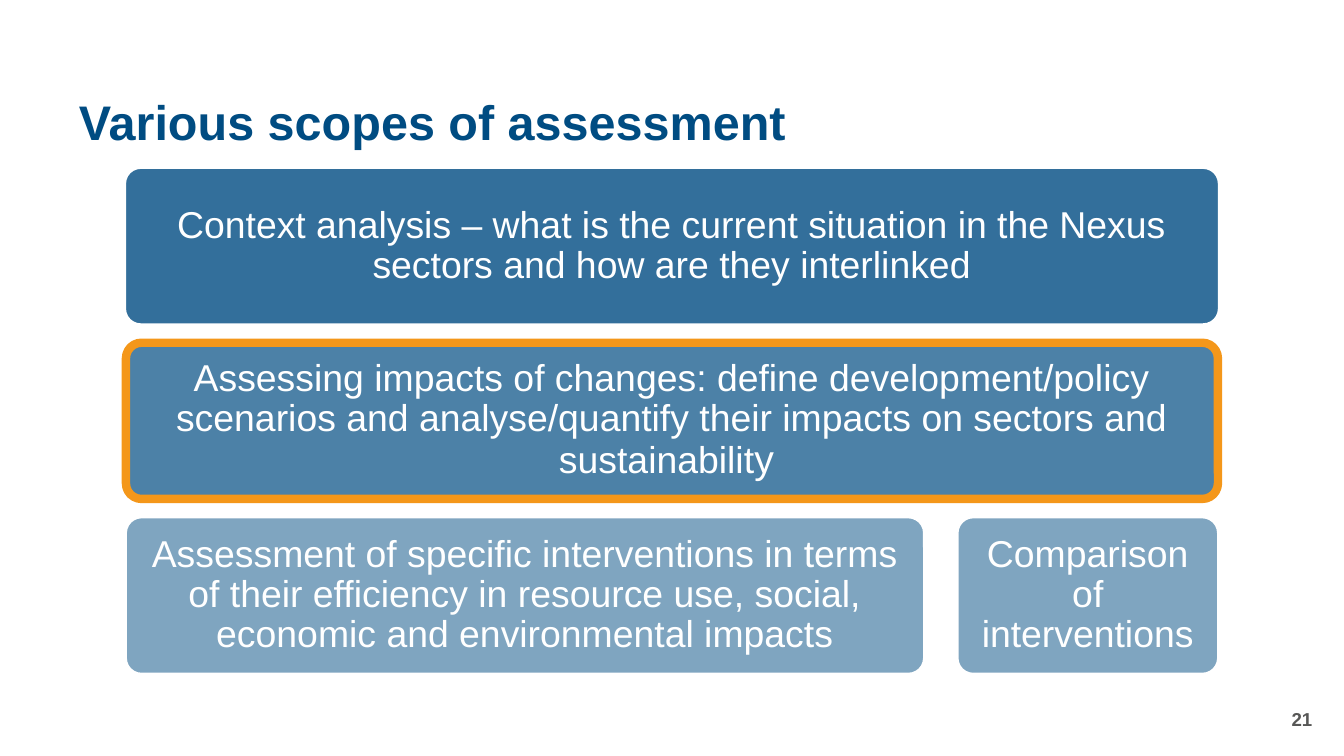
from lxml.etree import SubElement
from pptx import Presentation
from pptx.dml.color import RGBColor
from pptx.enum.shapes import MSO_SHAPE
from pptx.enum.text import MSO_ANCHOR, PP_ALIGN
from pptx.oxml.ns import qn
from pptx.util import Pt

PX = 5715
BLUE = RGBColor(0x00, 0x4C, 0x82)
ORANGE = RGBColor(0xF4, 0x97, 0x1A)
WHITE = RGBColor(0xFF, 0xFF, 0xFF)
GREY = RGBColor(0x57, 0x57, 0x56)

ROW_HEIGHT = 186
ROW_PITCH = 208
SCOPE_ROWS = [
    (80, WHITE, 1, [
        (0, 1302, [("Context analysis – what is the current situation in the Nexus "
                    "sectors and how are they interlinked", 20)]),
    ]),
    (70, ORANGE, 4.5, [
        (1, 1300, [("Assessing impacts of changes: define development/policy scenarios "
                    "and analyse/quantify their impacts on sectors and sustainabilit", 20),
                   ("y ", 21)]),
    ]),
    (50, WHITE, 1, [
        (1, 950, [("Assessment of specific interventions in terms of their efficiency "
                   "in resource use, social, economic and environmental impacts", 20)]),
        (991, 310, [("Comparison of interventions", 20)]),
    ]),
]


def px(*lengths):
    return [length * PX for length in lengths]


def write_line(frame, runs, color, bold, alignment, line_spacing):
    frame.word_wrap = True
    frame.vertical_anchor = MSO_ANCHOR.MIDDLE
    para = frame.paragraphs[0]
    para.alignment = alignment
    para.line_spacing = line_spacing
    para.font.name = "Arial"
    para.font.bold = bold
    para.font.color.rgb = color
    for text, size in runs:
        span = para.add_run()
        span.text = text
        span.font.size = Pt(size)


def add_title(page, left, top, width, height):
    title = page.shapes.title
    title.left, title.top, title.width, title.height = px(left, top, width, height)
    write_line(title.text_frame, [("Various scopes of assessment", 26)],
               BLUE, True, PP_ALIGN.LEFT, 0.9)


def add_page_number(page, left, top, width, height):
    box = page.shapes.add_textbox(*px(left, top, width, height))
    write_line(box.text_frame, [("21", 10)], GREY, True, PP_ALIGN.RIGHT, 1.0)


def add_scope(page, left, top, width, height, runs, opacity, line_color, line_width):
    box = page.shapes.add_shape(
        MSO_SHAPE.ROUNDED_RECTANGLE, *px(left, top, width, height))
    box.adjustments[0] = 0.1
    box.shadow.inherit = False
    box.fill.solid()
    box.fill.fore_color.rgb = BLUE
    color = box.fill._xPr.find(qn("a:solidFill")).find(qn("a:srgbClr"))
    SubElement(color, qn("a:alpha")).set("val", str(opacity * 1000))
    box.line.color.rgb = line_color
    box.line.width = Pt(line_width)

    frame = box.text_frame
    frame.margin_left = frame.margin_right = 13 * PX
    frame.margin_top = frame.margin_bottom = 13 * PX
    write_line(frame, runs, WHITE, False, PP_ALIGN.CENTER, 0.9)


def add_scopes(page, left, top):
    for row, (opacity, line_color, line_width, scopes) in enumerate(SCOPE_ROWS):
        for offset, width, runs in scopes:
            add_scope(page, left + offset, top + row * ROW_PITCH, width, ROW_HEIGHT,
                      runs, opacity, line_color, line_width)


def main():
    deck = Presentation()
    deck.slide_width, deck.slide_height = px(1600, 900)
    page = deck.slides.add_slide(deck.slide_layouts[5])
    add_title(page, 78, 101, 1499, 94)
    add_page_number(page, 1218, 832, 360, 48)
    add_scopes(page, 149, 200)
    deck.save("out.pptx")


if __name__ == "__main__":
    main()
